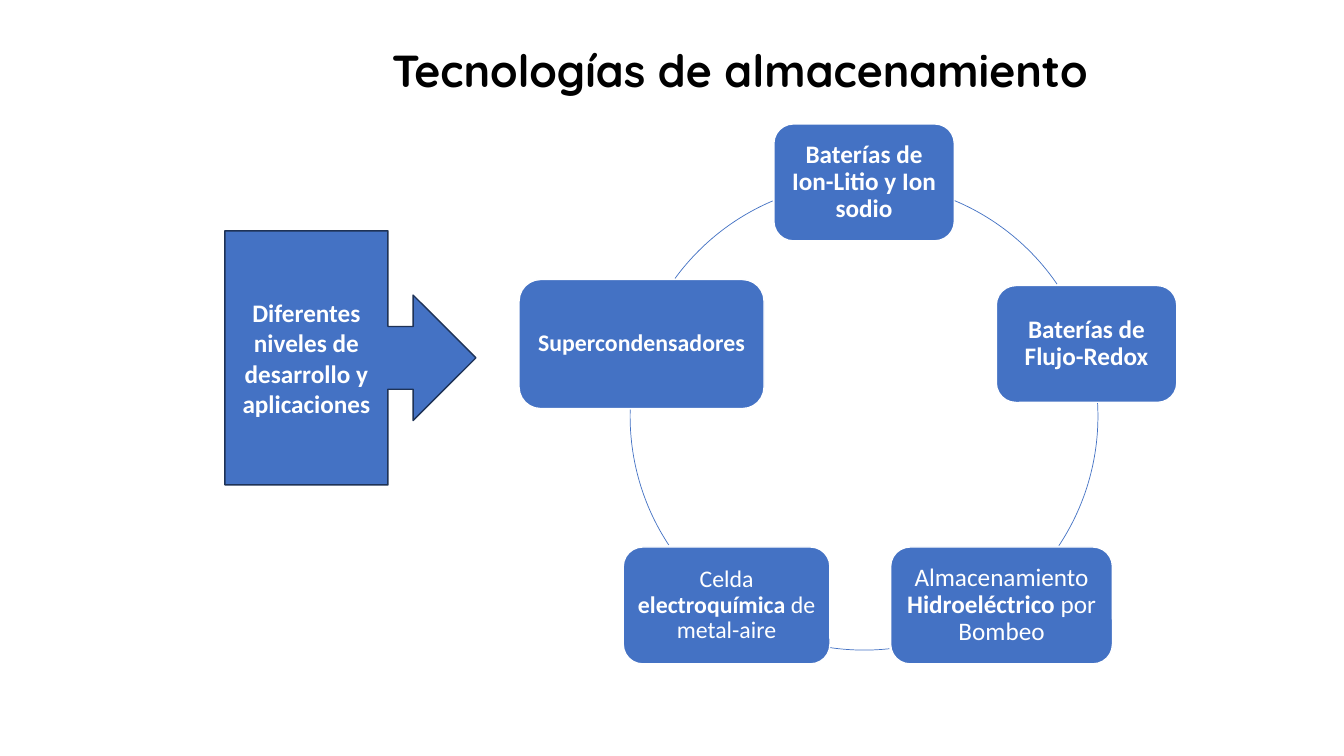
from dataclasses import dataclass
from math import cos, radians, sin

from pptx import Presentation
from pptx.dml.color import RGBColor
from pptx.enum.shapes import MSO_SHAPE
from pptx.enum.text import MSO_ANCHOR, PP_ALIGN
from pptx.util import Inches, Pt


@dataclass(frozen=True)
class Theme:
    blue: str = "4472C4"
    navy: str = "1E3256"
    white: str = "FFFFFF"
    black: str = "000000"
    head: str = "Quicksand"
    body: str = "Calibri"
    title: int = 32
    label: int = 18
    small: int = 17


class Board:
    def __init__(self, slide, theme):
        self.slide = slide
        self.theme = theme

    def label(self, shape, parts, size, font, color, space=1.0):
        """Fill a shape with one centred paragraph of (text, bold) parts."""
        frame = shape.text_frame
        frame.word_wrap = True
        frame.vertical_anchor = MSO_ANCHOR.MIDDLE
        para = frame.paragraphs[0]
        para.alignment = PP_ALIGN.CENTER
        para.line_spacing = space
        for text, bold in parts:
            run = para.add_run()
            run.text = text
            run.font.bold = bold
            run.font.size = Pt(size)
            run.font.name = font
            run.font.color.rgb = RGBColor.from_string(color)

    def shape(self, kind, left, top, width, height, line, weight=1.0):
        """Add an unfilled, shadowless preset shape with a coloured outline."""
        shape = self.slide.shapes.add_shape(
            kind, Inches(left), Inches(top), Inches(width), Inches(height))
        shape.shadow.inherit = False
        shape.fill.background()
        shape.line.color.rgb = RGBColor.from_string(line)
        shape.line.width = Pt(weight)
        return shape

    def paint(self, shape):
        shape.fill.solid()
        shape.fill.fore_color.rgb = RGBColor.from_string(self.theme.blue)

    def title(self, text, left, top, width, height):
        box = self.slide.shapes.add_textbox(
            Inches(left), Inches(top), Inches(width), Inches(height))
        self.label(box, [(text, True)], self.theme.title, self.theme.head,
                   self.theme.black, 0.9)

    def arc(self, x, y, radius, start, end):
        """Draw a clockwise arc; angles are degrees from east."""
        arc = self.shape(MSO_SHAPE.ARC, x - radius, y - radius, 2 * radius,
                         2 * radius, self.theme.blue, 0.5)
        # Angles are stored in 60000ths of a degree, adjustments in 100000ths.
        arc.adjustments[0] = start * 0.6
        arc.adjustments[1] = end * 0.6

    def node(self, x, y, width, height, parts, size):
        """Add a rounded box centred on (x, y)."""
        box = self.shape(MSO_SHAPE.ROUNDED_RECTANGLE, x - width / 2,
                         y - height / 2, width, height, self.theme.white)
        self.paint(box)
        frame = box.text_frame
        frame.margin_left = frame.margin_right = Inches(0.07)
        frame.margin_top = frame.margin_bottom = Inches(0.07)
        self.label(box, parts, size, self.theme.body, self.theme.white, 0.9)

    def callout(self, text, left, top, width, height):
        arrow = self.shape(MSO_SHAPE.RIGHT_ARROW_CALLOUT, left, top, width,
                           height, self.theme.navy)
        self.paint(arrow)
        self.label(arrow, [(text, True)], self.theme.label, self.theme.body,
                   self.theme.white)


def main():
    deck = Presentation()
    deck.slide_width = Inches(13.33)
    deck.slide_height = Inches(7.5)
    theme = Theme()
    board = Board(deck.slides.add_slide(deck.slide_layouts[6]), theme)

    board.title("Tecnologías de almacenamiento", 1.75, 0.16, 11.18, 1.12)

    # Width, height, text parts, type size, and the arc that follows the node.
    ring = [
        (1.79, 1.16, [("Baterías de Ion-Litio y Ion sodio", True)],
         theme.label, (292.8, 325.6)),
        (1.79, 1.16, [("Baterías de Flujo-Redox", True)],
         theme.label, (356.8, 33.6)),
        (2.2, 1.16, [("Almacenamiento ", False), ("Hidroeléctrico", True),
                     (" por Bombeo", False)],
         theme.label, (83.8, 98.4)),
        (2.05, 1.16, [("Celda ", False), ("electroquímica", True),
                      (" de metal-aire", False)],
         theme.small, (146.6, 181.7)),
        (2.43, 1.28, [("Supercondensadores", True)],
         theme.small, (216.1, 247)),
    ]
    x, y, radius = 8.57, 4.13, 2.32
    for i, (width, height, parts, size, span) in enumerate(ring):
        turn = radians(360 / len(ring) * i - 90)
        board.node(x + radius * cos(turn), y + radius * sin(turn),
                   width, height, parts, size)
        board.arc(x, y, radius, *span)

    board.callout("Diferentes niveles de desarrollo y aplicaciones",
                  2.23, 2.29, 2.49, 2.52)
    deck.save("out.pptx")


if __name__ == "__main__":
    main()
